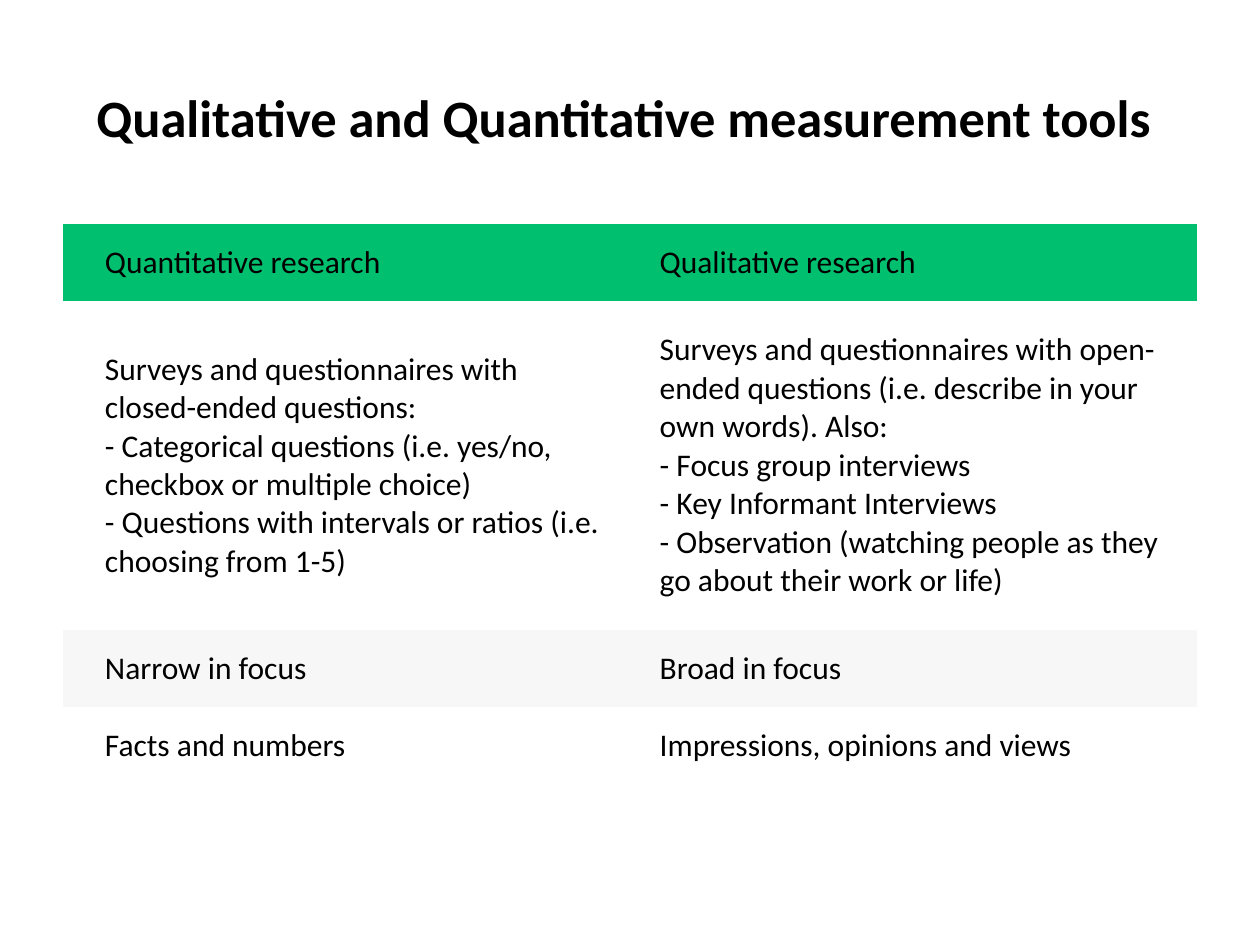
from pptx import Presentation
from pptx.dml.color import RGBColor
from pptx.enum.text import MSO_ANCHOR, PP_ALIGN
from pptx.util import Pt

MIDDLE = MSO_ANCHOR.MIDDLE
CENTER = PP_ALIGN.CENTER
BLACK = RGBColor(0x00, 0x00, 0x00)
GREEN = RGBColor(0x00, 0xBF, 0x6F)
GRAY = RGBColor(0xF7, 0xF7, 0xF7)
FONT = "Calibri"
PLAIN = "{2D5ABB26-0587-4C30-8999-92F81FD0307C}"

ROWS = [
    (44, GREEN, "Quantitative research", "Qualitative research"),
    (188, None,
     "Surveys and questionnaires with closed-ended questions:\v"
     "- Categorical questions (i.e. yes/no, checkbox or multiple choice)\v"
     "- Questions with intervals or ratios (i.e. choosing from 1-5)",
     "Surveys and questionnaires with open-ended questions "
     "(i.e. describe in your own words). Also:\v"
     "- Focus group interviews \v"
     "- Key Informant Interviews\n"
     "- Observation (watching people as they go about their work or life)"),
    (44, GRAY, "Narrow in focus", "Broad in focus"),
    (44, None, "Facts and numbers", "Impressions, opinions and views"),
]
INSETS = [24, 17]


def style(frame, size, bold=False):
    for para in frame.paragraphs:
        for run in para.runs:
            run.font.name = FONT
            run.font.size = Pt(size)
            run.font.bold = bold
            run.font.color.rgb = BLACK


deck = Presentation()
deck.slide_width = Pt(720)
deck.slide_height = Pt(540)
slide = deck.slides.add_slide(deck.slide_layouts[6])

title = slide.shapes.add_textbox(Pt(36), Pt(21.6), Pt(648), Pt(90)).text_frame
title.word_wrap = True
title.vertical_anchor = MIDDLE
title.text = "Qualitative and Quantitative measurement tools "
title.paragraphs[0].alignment = CENTER
style(title, 30, True)

high = sum(row[0] for row in ROWS)
frame = slide.shapes.add_table(len(ROWS), 2, Pt(36), Pt(128), Pt(648), Pt(high))
table = frame.table
table.first_row = False
table.horz_banding = False
table._tbl.tblPr[0].text = PLAIN

for r, (height, fill, *texts) in enumerate(ROWS):
    table.rows[r].height = Pt(height)
    for c, text in enumerate(texts):
        cell = table.cell(r, c)
        cell.margin_left = Pt(INSETS[c])
        cell.margin_right = Pt(17)
        cell.margin_top = cell.margin_bottom = Pt(8.5)
        cell.vertical_anchor = MIDDLE
        cell.text_frame.text = text
        style(cell.text_frame, 18)
        if fill is None:
            cell.fill.background()
        else:
            cell.fill.solid()
            cell.fill.fore_color.rgb = fill

deck.save("out.pptx")
